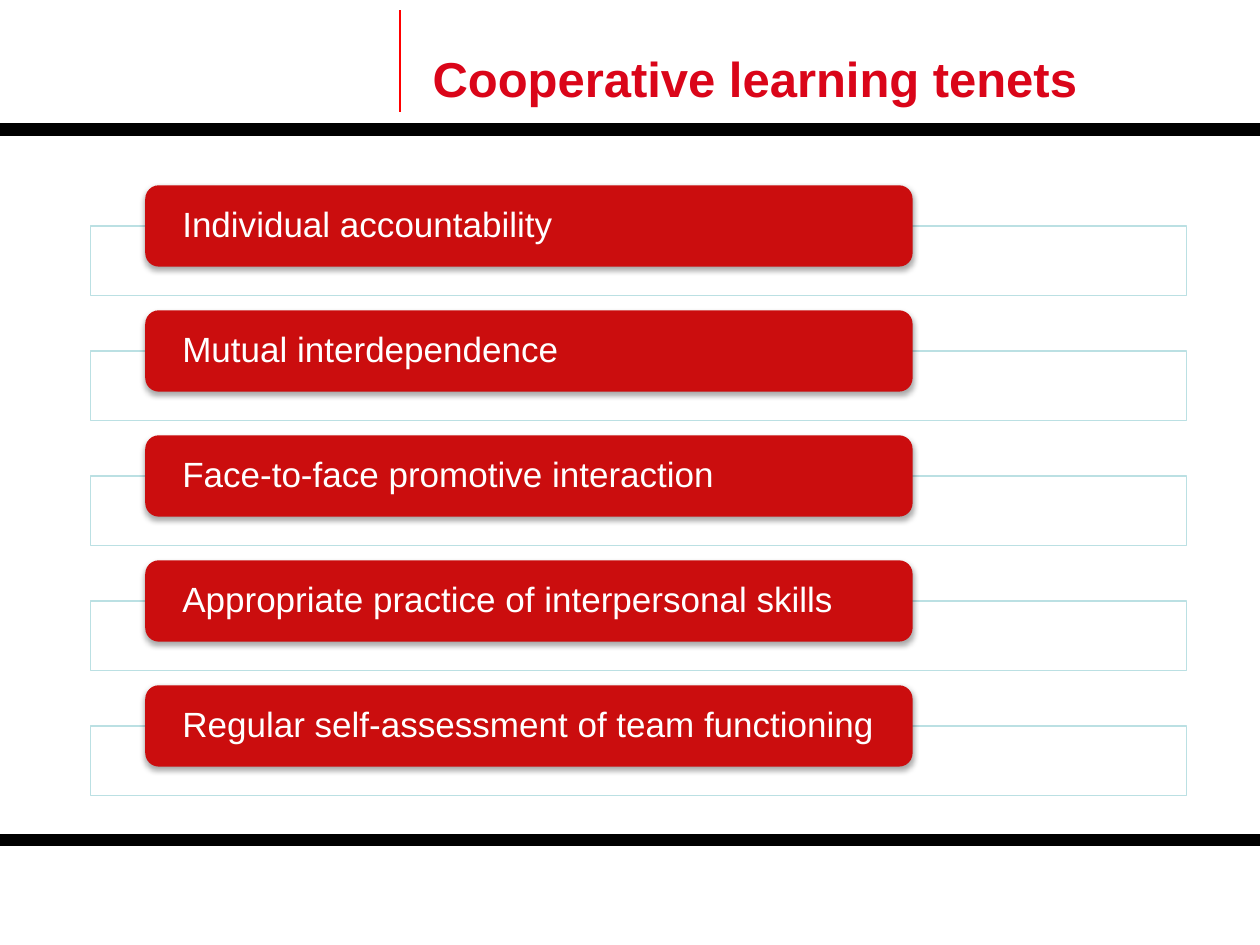
"""Build the slide on the five tenets of cooperative learning."""
from lxml import etree
from pptx import Presentation
from pptx.dml.color import RGBColor
from pptx.enum import shapes, text
from pptx.oxml import ns
from pptx.util import Pt

COLORS = {"title": "DA0519", "divider": "FF0000", "rule": "000000", "tenet": "CB0D0E",
          "frame": "FFFFFF", "outline": "BBE0E3", "label": "FFFFFF", "shadow": "000000"}
TENETS = ["Individual accountability", "Mutual interdependence",
          "Face-to-face promotive interaction",
          "Appropriate practice of interpersonal skills",
          "Regular self-assessment of team functioning"]
RULES = [(228.5, 64, 228.5, 6, "divider", 1.25),
         (-1.5, 74, 721, 74, "rule", 7),
         (0, 480, 722, 480, "rule", 7)]
FIRST_TOP, PITCH = 105.9, 71.43


def rgb(role):
    return RGBColor.from_string(COLORS[role])


def add_element(parent, tag, **attributes):
    return etree.SubElement(parent, ns.qn(tag), attributes)


deck = Presentation()
deck.slide_width, deck.slide_height = Pt(720), Pt(540)
slide = deck.slides.add_slide(deck.slide_layouts[5])

heading = slide.shapes.title
heading.left, heading.top, heading.width, heading.height = Pt(240), Pt(24), Pt(456), Pt(41)
heading.text_frame.text = "Cooperative learning tenets"
heading.text_frame.vertical_anchor = text.MSO_ANCHOR.MIDDLE
heading_line = heading.text_frame.paragraphs[0]
heading_line.alignment = text.PP_ALIGN.LEFT
heading_font = heading_line.runs[0].font
heading_font.name, heading_font.size, heading_font.bold = "Arial", Pt(28), True
heading_font.color.rgb = rgb("title")

for x1, y1, x2, y2, role, weight in RULES:
    rule = slide.shapes.add_connector(shapes.MSO_CONNECTOR.STRAIGHT,
                                      Pt(x1), Pt(y1), Pt(x2), Pt(y2))
    rule.line.color.rgb = rgb(role)
    rule.line.width = Pt(weight)
    add_element(rule._element.spPr, "a:effectLst")

for row, tenet in enumerate(TENETS):
    top = FIRST_TOP + row * PITCH

    frame = slide.shapes.add_shape(shapes.MSO_SHAPE.RECTANGLE,
                                   Pt(51.7), Pt(top + 23.3), Pt(626.4), Pt(39.7))
    frame.shadow.inherit = False
    frame.fill.solid()
    frame.fill.fore_color.rgb = rgb("frame")
    frame_color = frame._element.spPr.find(".//" + ns.qn("a:srgbClr"))
    add_element(frame_color, "a:alpha", val="90000")
    frame.line.color.rgb = rgb("outline")
    frame.line.width = Pt(0.75)

    pill = slide.shapes.add_shape(shapes.MSO_SHAPE.ROUNDED_RECTANGLE,
                                  Pt(83), Pt(top), Pt(438.5), Pt(46.5))
    pill.shadow.inherit = False
    pill.fill.solid()
    pill.fill.fore_color.rgb = rgb("tenet")
    pill.line.fill.background()
    effects = pill._element.spPr.find(ns.qn("a:effectLst"))
    shadow = add_element(effects, "a:outerShdw", blurRad=str(Pt(3.1)), dist=str(Pt(1.8)),
                         dir="5400000", rotWithShape="0")
    shadow_color = add_element(shadow, "a:srgbClr", val=COLORS["shadow"])
    add_element(shadow_color, "a:alpha", val="35000")

    label = pill.text_frame
    label.text = tenet
    label.word_wrap = True
    label.vertical_anchor = text.MSO_ANCHOR.MIDDLE
    label.margin_left = label.margin_right = Pt(18.9)
    label.margin_top = label.margin_bottom = Pt(0)
    label_line = label.paragraphs[0]
    label_line.alignment = text.PP_ALIGN.LEFT
    label_line.line_spacing = 0.9
    label_font = label_line.runs[0].font
    label_font.name, label_font.size = "Arial", Pt(20)
    label_font.color.rgb = rgb("label")

deck.save("out.pptx")
